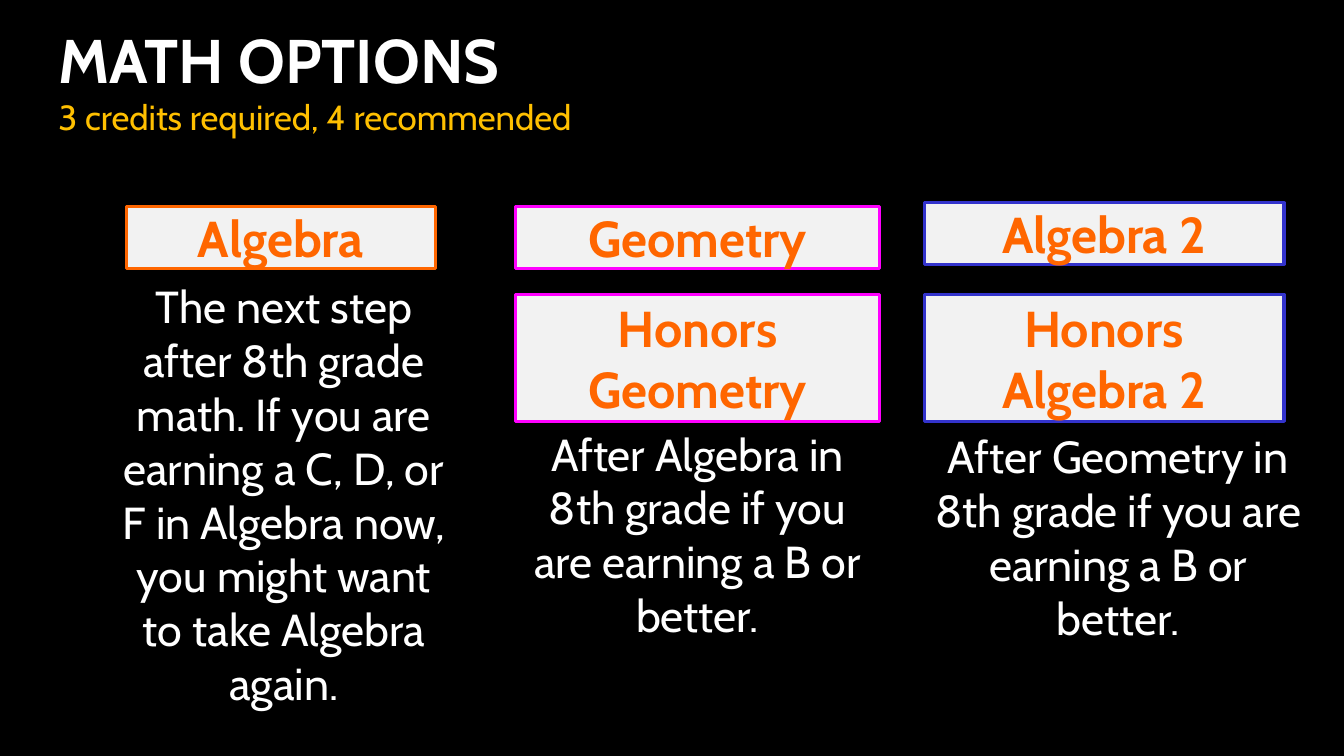
from pptx import Presentation
from pptx.dml.color import RGBColor
from pptx.enum.shapes import MSO_SHAPE
from pptx.enum.text import MSO_ANCHOR, MSO_AUTO_SIZE, PP_ALIGN
from pptx.util import Cm, Pt


def rgb(hex_color):
    return RGBColor.from_string(hex_color)


def style(span, size, color, bold=False):
    span.font.name = "Cabin"
    span.font.size = Pt(size)
    span.font.bold = bold
    span.font.color.rgb = rgb(color)


ORANGE, MAGENTA, BLUE = "FF6600", "FF00FF", "3333CC"
WHITE, GOLD, LIGHT_GRAY = "FFFFFF", "FFC000", "F2F2F2"

deck = Presentation()
deck.slide_width, deck.slide_height = Cm(33.87), Cm(19.05)
page = deck.slides.add_slide(deck.slide_layouts[6])
page.background.fill.solid()
page.background.fill.fore_color.rgb = rgb("000000")

# Course boxes: name, border color, left, top, width, height
courses = [
    ("Algebra", ORANGE, 3.18, 5.21, 7.8, 1.55),
    ("Geometry", MAGENTA, 13, 5.21, 9.17, 1.55),
    ("Honors\nGeometry", MAGENTA, 13, 7.42, 9.17, 3.2),
    ("Honors\nAlgebra 2", BLUE, 23.29, 7.42, 9.07, 3.2),
    ("Algebra 2", BLUE, 23.29, 5.11, 9.07, 1.55),
]
for name, border, *place in courses:
    box = page.shapes.add_shape(MSO_SHAPE.RECTANGLE, *map(Cm, place))
    box.shadow.inherit = False
    box.fill.solid()
    box.fill.fore_color.rgb = rgb(LIGHT_GRAY)
    box.line.color.rgb = rgb(border)
    box.line.width = Pt(2.25)
    box.text_frame.word_wrap = False
    box.text_frame.vertical_anchor = MSO_ANCHOR.MIDDLE
    box.text_frame.text = name
    for para in box.text_frame.paragraphs:
        para.alignment = PP_ALIGN.CENTER
        style(para.runs[0], 36, ORANGE, bold=True)

# Text blocks: text, alignment, run styles, left, top, width, height
body = [(32, WHITE)]
texts = [
    ("MATH OPTIONS\v3 credits required, 4 recommended", PP_ALIGN.LEFT,
     [(44, WHITE, True), (24.9, GOLD)], 1.22, 0.43, 30.18, 3.2),
    ("The next step after 8th grade math. If you are earning a C, D, or F "
     "in Algebra now, you might want to take Algebra again.",
     PP_ALIGN.CENTER, body, 2.62, 6.91, 9.07, 9.83),
    ("After Algebra in 8th grade if you are earning a B or better.",
     PP_ALIGN.CENTER, body, 12.78, 10.62, 9.6, 5.74),
    ("After Geometry in 8th grade if you are earning a B or better.",
     PP_ALIGN.CENTER, body, 23.04, 10.69, 10.29, 5.74),
]
for text, alignment, run_styles, *place in texts:
    box = page.shapes.add_textbox(*map(Cm, place))
    box.text_frame.word_wrap = True
    box.text_frame.auto_size = MSO_AUTO_SIZE.SHAPE_TO_FIT_TEXT
    para = box.text_frame.paragraphs[0]
    para.text = text
    para.alignment = alignment
    for span, run_style in zip(para.runs, run_styles):
        style(span, *run_style)

deck.save("out.pptx")
